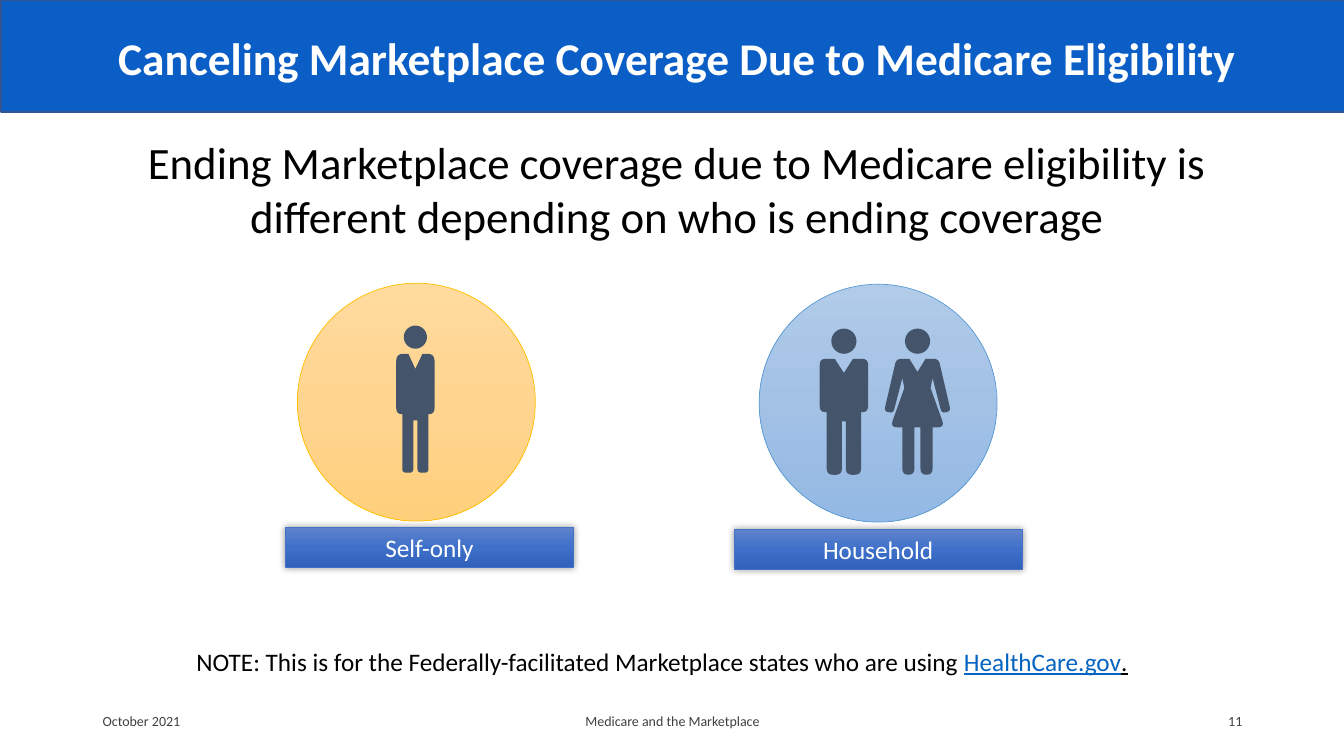
from copy import deepcopy
from dataclasses import dataclass

from lxml import etree
from pptx import Presentation
from pptx import util as u
from pptx.dml.color import RGBColor
from pptx.enum import shapes, text
from pptx.oxml import ns

ALIGN = text.PP_ALIGN
ANCHOR = text.MSO_ANCHOR
SHAPE = shapes.MSO_SHAPE


@dataclass(frozen=True)
class Theme:
    """Fonts, type sizes and colours of the slide."""
    font: str = "Calibri"
    title: float = 32.4
    lead: float = 32
    label: float = 18
    footer: float = 10
    white: str = "FFFFFF"
    black: str = "000000"
    grey: str = "404040"
    link: str = "0563C1"
    band: str = "0A5EC6"
    band_edge: str = "325491"
    figure: str = "44546A"
    gold: tuple = ("FFDB9E", "FFD590", "FFD07C")
    gold_edge: str = "FFC000"
    sky: tuple = ("B1CBE9", "A3C1E5", "93B9E4")
    sky_edge: str = "5B9BD5"
    plate: tuple = ("6183CB", "3E70CA", "3062BB")
    plate_edge: str = "4472C4"


def round_corners(corners):
    """Return the outline with each (x, y, radius) corner softened."""
    outline = []
    for i, (x, y, radius) in enumerate(corners):
        if not radius:
            outline.append((x, y))
            continue
        ends = []
        for nx, ny, _ in (corners[i - 1], corners[(i + 1) % len(corners)]):
            share = min(1, radius / ((nx - x) ** 2 + (ny - y) ** 2) ** 0.5)
            ends.append((x + (nx - x) * share, y + (ny - y) * share))
        (ax, ay), (bx, by) = ends
        for t in (0, 0.25, 0.5, 0.75, 1):
            a, c, b = (1 - t) ** 2, 2 * t * (1 - t), t * t
            outline.append((a * ax + c * x + b * bx, a * ay + c * y + b * by))
    return outline


class Page:
    """Draws the elements of one slide in one theme."""

    def __init__(self, slide, theme):
        self.shapes = slide.shapes
        self.theme = theme

    def style(self, run, size, color, bold=False, underline=False):
        """Apply font settings to a run."""
        font = run.font
        font.name, font.size, font.bold = self.theme.font, u.Pt(size), bold
        font.underline = underline
        font.color.rgb = RGBColor.from_string(color)

    def shape(self, kind, box, fill, edge=None, width=0.5):
        """Add a preset shape with a plain or a three-stop fill."""
        item = self.shapes.add_shape(kind, *map(u.Inches, box))
        item.shadow.inherit = False
        if isinstance(fill, str):
            item.fill.solid()
            item.fill.fore_color.rgb = RGBColor.from_string(fill)
        else:
            item.fill.gradient()
            item.fill.gradient_angle = 270
            stops = item._element.spPr.find(ns.qn("a:gradFill")).find(ns.qn("a:gsLst"))
            stops.insert(1, deepcopy(stops[0]))
            for i, (stop, color) in enumerate(zip(item.fill.gradient_stops, fill)):
                stop.position = i / 2
                stop.color.rgb = RGBColor.from_string(color)
        if edge:
            item.line.color.rgb = RGBColor.from_string(edge)
            item.line.width = u.Pt(width)
        else:
            item.line.fill.background()
        return item

    def text(self, box, parts, align=ALIGN.LEFT, anchor=ANCHOR.TOP, before=0):
        """Add a text box of (words, size, colour, bold, underline) parts."""
        frame = self.shapes.add_textbox(*map(u.Inches, box)).text_frame
        frame.word_wrap, frame.vertical_anchor = True, anchor
        paragraph = frame.paragraphs[0]
        paragraph.alignment, paragraph.space_before = align, u.Pt(before)
        for words, *look in parts:
            run = paragraph.add_run()
            run.text = words
            self.style(run, *look)

    def plate(self, left, top, words):
        """Add a caption plate with a soft shadow."""
        theme = self.theme
        item = self.shape(SHAPE.RECTANGLE, (left, top, 2.86, 0.4), theme.plate, theme.plate_edge)
        effects = item._element.spPr.find(ns.qn("a:effectLst"))
        shadow = etree.SubElement(effects, ns.qn("a:outerShdw"), blurRad=str(u.Pt(5)), dist="0", dir="0")
        color = etree.SubElement(shadow, ns.qn("a:srgbClr"), val=theme.black)
        etree.SubElement(color, ns.qn("a:alpha"), val="40000")
        frame = item.text_frame
        frame.margin_left = frame.margin_right = u.Inches(0.05)
        frame.margin_top = frame.margin_bottom = u.Inches(0.05)
        frame.vertical_anchor = ANCHOR.MIDDLE
        frame.text = words
        frame.paragraphs[0].alignment = ALIGN.CENTER
        self.style(frame.paragraphs[0].runs[0], theme.label, theme.white)

    def person(self, center, head_top, head_size, half):
        """Add a figure from its head and the right half of its body."""
        head = (center - head_size / 2, head_top, head_size, head_size)
        self.shape(SHAPE.OVAL, head, self.theme.figure)
        right = [(center + dx, y, radius) for dx, y, radius in half]
        left = [(center - dx, y, radius) for dx, y, radius in reversed(half) if dx]
        outline = [(u.Inches(x), u.Inches(y)) for x, y in round_corners(right + left)]
        builder = self.shapes.build_freeform(*outline[0])
        builder.add_line_segments(outline[1:], close=True)
        body = builder.convert_to_shape()
        body.shadow.inherit = False
        body.fill.solid()
        body.fill.fore_color.rgb = RGBColor.from_string(self.theme.figure)
        body.line.fill.background()


SLIM_MAN = [(0, 3.66, 0), (0.07, 3.51, 0), (0.19, 3.51, 0.07), (0.19, 4.11, 0.06),
            (0.13, 4.11, 0), (0.13, 4.69, 0.04), (0.02, 4.69, 0.04), (0.02, 4.17, 0)]
BROAD_MAN = [(0, 3.7, 0), (0.09, 3.56, 0), (0.24, 3.56, 0.06), (0.24, 4.09, 0.06),
             (0.17, 4.09, 0), (0.17, 4.71, 0.06), (0.02, 4.71, 0.06), (0.02, 4.18, 0)]
WOMAN = [(0, 3.69, 0), (0.08, 3.56, 0), (0.21, 3.56, 0.05), (0.33, 4.08, 0.04),
         (0.24, 4.1, 0.04), (0.15, 3.75, 0), (0.13, 3.85, 0), (0.27, 4.24, 0.07),
         (0.15, 4.24, 0), (0.15, 4.71, 0.06), (0.03, 4.71, 0.06), (0.03, 4.24, 0)]


def main():
    """Build the slide and save it."""
    deck = Presentation()
    deck.slide_width, deck.slide_height = u.Inches(13.33), u.Inches(7.5)
    theme = Theme()
    page = Page(deck.slides.add_slide(deck.slide_layouts[6]), theme)

    page.shape(SHAPE.RECTANGLE, (0.01, 0, 13.33, 1.11), theme.band, theme.band_edge, 1)
    page.text((0.38, 0.01, 12.67, 1.12),
              [("Canceling Marketplace Coverage Due to Medicare Eligibility",
                theme.title, theme.white, True)], ALIGN.CENTER, ANCHOR.MIDDLE)
    page.text((0.67, 1.29, 12.09, 1.3),
              [("Ending Marketplace coverage due to Medicare eligibility is different "
                "depending on who is ending coverage", theme.lead, theme.black)],
              ALIGN.CENTER, before=6)

    page.shape(SHAPE.OVAL, (2.95, 2.81, 2.36, 2.36), theme.gold, theme.gold_edge)
    page.plate(2.83, 5.23, "Self-only")
    page.person(4.12, 3.23, 0.23, SLIM_MAN)

    page.shape(SHAPE.OVAL, (7.53, 2.82, 2.36, 2.36), theme.sky, theme.sky_edge)
    page.person(8.37, 3.26, 0.25, BROAD_MAN)
    page.person(9.1, 3.26, 0.25, WOMAN)
    page.plate(7.28, 5.25, "Household")

    page.text((1.85, 6.36, 9.88, 0.4),
              [("NOTE: This is for the Federally-facilitated Marketplace states who are using ",
                theme.label, theme.black),
               ("HealthCare.gov", theme.label, theme.link, False, True),
               (".", theme.label, theme.black, False, True)])
    for left, width, words, align in ((0.92, 3, "October 2021", ALIGN.LEFT),
                                      (4.42, 4.5, "Medicare and the Marketplace", ALIGN.CENTER),
                                      (9.42, 3, "11", ALIGN.RIGHT)):
        page.text((left, 6.95, width, 0.4), [(words, theme.footer, theme.grey)], align, ANCHOR.MIDDLE)

    deck.save("out.pptx")


if __name__ == "__main__":
    main()
